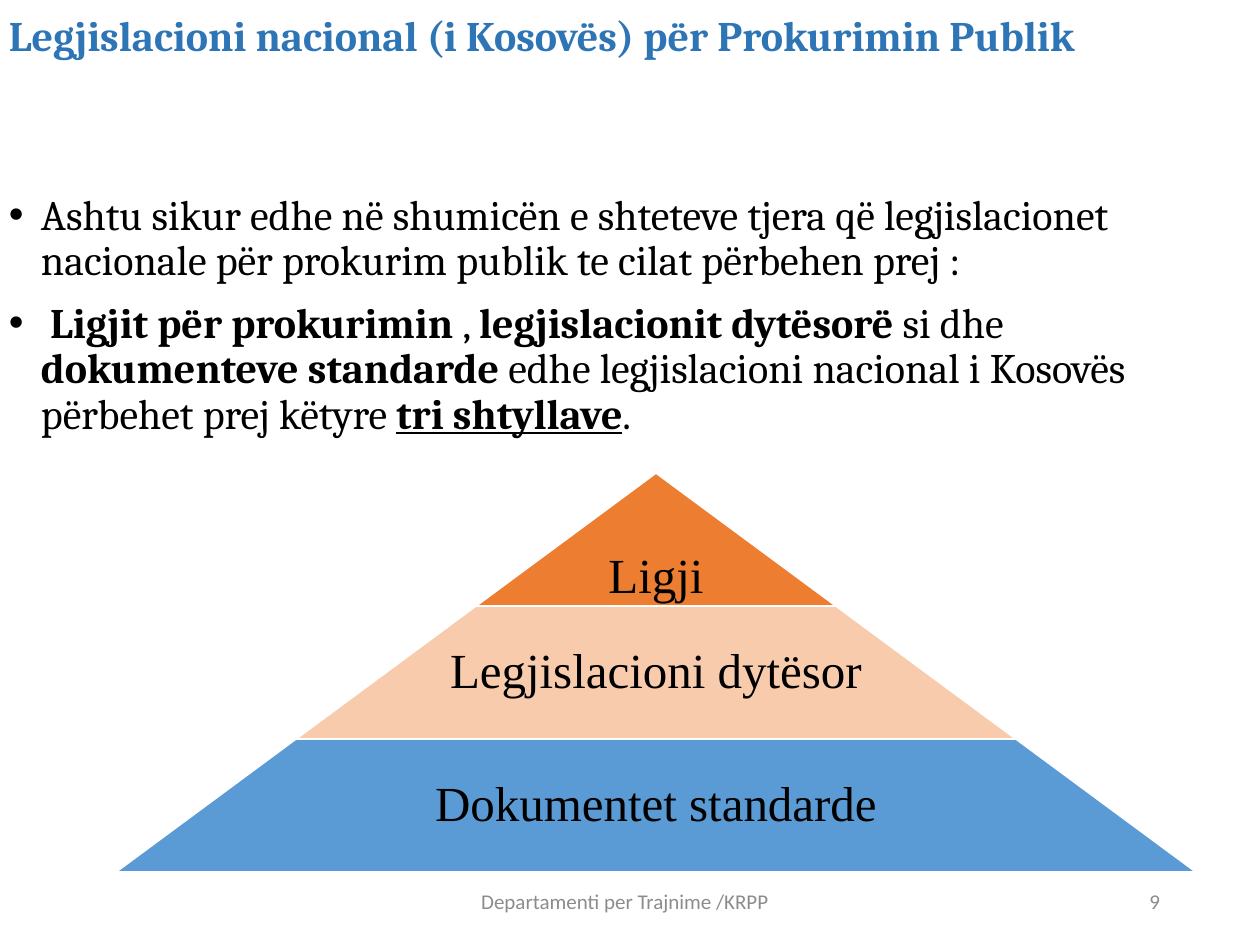
from lxml import etree
from pptx import Presentation
from pptx import util as u
from pptx.dml.color import RGBColor
from pptx.enum import shapes, text
from pptx.oxml.ns import qn

PX = 914400 / 126
COLORS = {
    "title": "2E75B6", "ink": "000000", "footer": "8C8C8C", "edge": "FFFFFF",
    "law": "ED7D31", "secondary": "F8CBAD", "documents": "5B9BD5",
}


def px(*lengths):
    return [u.Emu(round(length * PX)) for length in lengths]


def add_text(box, paragraphs, font, color, size, align="LEFT", anchor="TOP",
             inset=(9, 5), spacing=0.9):
    """Put paragraphs, each a list of (words, run format) pairs, in a text box at box."""
    frame = slide.shapes.add_textbox(*px(*box)).text_frame
    side, top = px(*inset)
    frame_format = {
        "word_wrap": True, "vertical_anchor": getattr(text.MSO_ANCHOR, anchor),
        "margin_left": side, "margin_right": side, "margin_top": top, "margin_bottom": top,
    }
    for name, value in frame_format.items():
        setattr(frame, name, value)
    for index, runs in enumerate(paragraphs):
        paragraph = frame.add_paragraph() if index else frame.paragraphs[0]
        paragraph.alignment = getattr(text.PP_ALIGN, align)
        paragraph.line_spacing = spacing
        for words, extra in runs:
            run = paragraph.add_run()
            run.text = words
            run.font.color.rgb = RGBColor.from_string(COLORS[color])
            for name, value in {"name": font, "size": u.Pt(size), **extra}.items():
                setattr(run.font, name, value)
    return frame


deck = Presentation()
deck.slide_width, deck.slide_height = px(1260, 945)
slide = deck.slides.add_slide(deck.slide_layouts[6])

bold = {"bold": True}
add_text((0, 10, 1260, 147),
         [[("Legjislacioni nacional (i Kosovës) për Prokurimin Publik", bold)]],
         "Cambria", "title", 24)

pillars = [
    [("Ashtu sikur edhe në shumicën e shteteve tjera që legjislacionet nacionale "
      "për prokurim publik te cilat përbehen prej :", {})],
    [(" ", {}), ("Ligjit për prokurimin ", bold), (", ", {}),
     ("legjislacionit dytësorë", bold), (" si dhe ", {}),
     ("dokumenteve standarde ", bold),
     ("edhe legjislacioni nacional i Kosovës përbehet prej këtyre ", {}),
     ("tri shtyllave", {"bold": True, "underline": True}), (".", {})],
]
body = add_text((0, 189, 1260, 270), pillars, "Cambria", "ink", 24)
indent = px(32)[0]
for paragraph in body.paragraphs:
    properties = paragraph._p.get_or_add_pPr()
    properties.set("marL", str(indent))
    properties.set("indent", str(-indent))
    etree.SubElement(properties, qn("a:buFont"), typeface="Arial")
    etree.SubElement(properties, qn("a:buChar"), char="•")
body.paragraphs[1].space_before = u.Pt(10)

# Pyramid: every tier is wider than the one above by one step on each side
center, top, height, step = 656, 473, 133, 180
tiers = [
    ("Ligji", "law", 360, 38),
    ("Legjislacioni dytësor", "secondary", 468, 0),
    ("Dokumentet standarde", "documents", 704, 0),
]
for level, (label, color, label_width, drop) in enumerate(tiers):
    half_width = step * (level + 1)
    y = top + level * height
    tier = slide.shapes.add_shape(shapes.MSO_SHAPE.TRAPEZOID,
                                  *px(center - half_width, y, 2 * half_width, height))
    tier.adjustments[0] = step / height
    tier.shadow.inherit = False
    tier.fill.solid()
    tier.fill.fore_color.rgb = RGBColor.from_string(COLORS[color])
    tier.line.color.rgb = RGBColor.from_string(COLORS["edge"])
    tier.line.width = u.Pt(1)
    add_text((center - label_width / 2, y + drop, label_width, height), [[(label, {})]],
             "Times New Roman", "ink", 28, "CENTER", "MIDDLE", (5, 5))

for words, left, width, align in [
    ("9", 890, 283, "RIGHT"),
    ("Departamenti per Trajnime /KRPP", 412, 426, "CENTER"),
]:
    add_text((left, 876, width, 50), [[(words, {})]], "Calibri", "footer", 12,
             align, "MIDDLE", (13, 6), 1.0)

deck.save("out.pptx")
